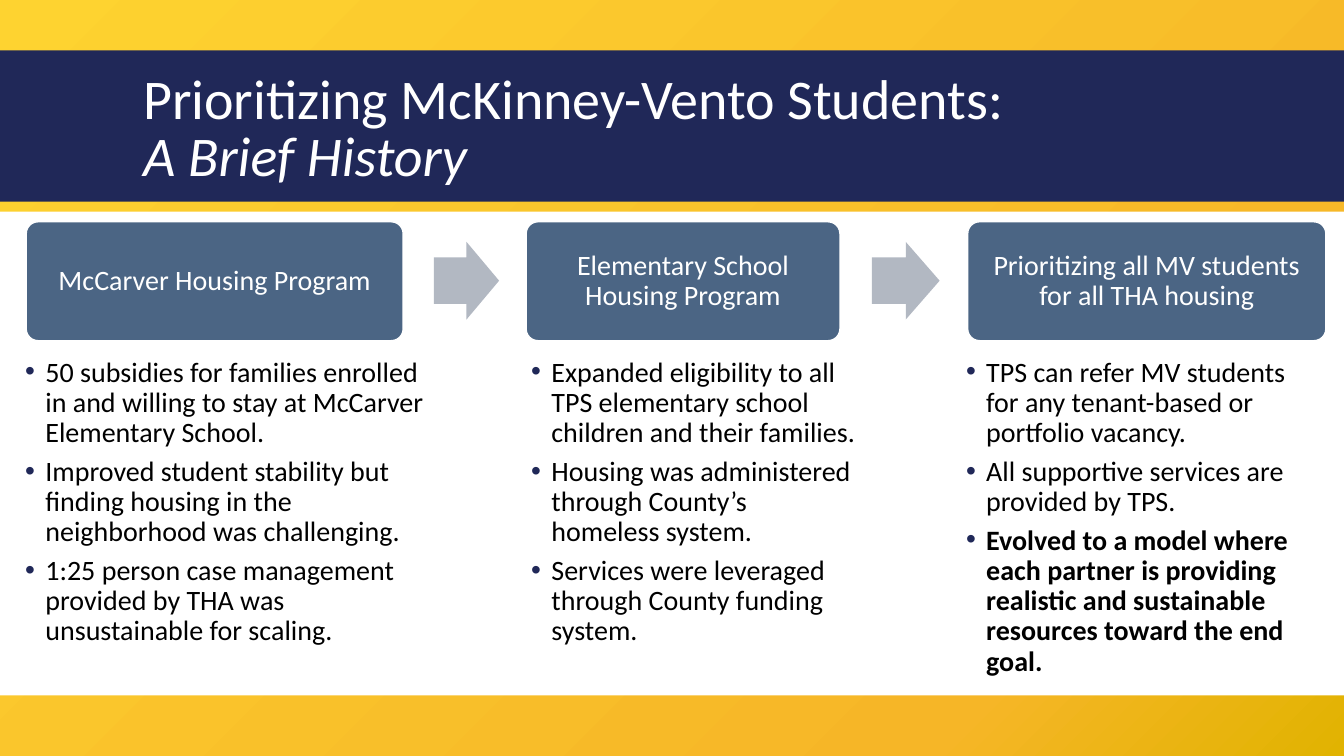
from dataclasses import dataclass
from itertools import pairwise

import lxml.etree
import pptx
import pptx.dml.color
import pptx.enum.shapes
import pptx.enum.text
import pptx.oxml.ns
import pptx.shapes.autoshape
import pptx.shapes.placeholder
import pptx.slide
import pptx.text.text
import pptx.util

SHAPE = pptx.enum.shapes.MSO_SHAPE
ALIGN = pptx.enum.text.PP_ALIGN
ANCHOR = pptx.enum.text.MSO_ANCHOR
FONT = "Calibri"
COLORS = {
    "navy": "202858", "white": "FFFFFF", "black": "000000",
    "card": "4B6584", "arrow": "B2B8C2",
    "gold_light": "FED330", "gold": "F6B627", "gold_dark": "E1B301",
}

# Grid: 100 columns by 75 rows
WIDTH, HEIGHT = pptx.util.Inches(13.33), pptx.util.Inches(7.5)
COLUMN, ROW = WIDTH / 100, HEIGHT / 75
CARD_TOP, CARD_ROWS = 22, 11.8
ARROW_TOP, ARROW_ROWS = 24, 7.7
LIST_TOP, LIST_ROWS = 35, 34


@dataclass(frozen=True)
class Area:
    left: float
    top: float
    columns: float
    rows: float

    def emu(self) -> tuple[int, int, int, int]:
        return (round(self.left * COLUMN), round(self.top * ROW),
                round(self.columns * COLUMN), round(self.rows * ROW))


@dataclass(frozen=True)
class Stage:
    heading: str
    card_left: float
    card_columns: float
    list_left: float
    list_columns: float
    placeholder: int
    points: tuple[str, ...]
    bold_last: bool = False


STAGES = (
    Stage("McCarver Housing Program", 1.95, 28.05, -0.75, 33.1, 1, (
        "50 subsidies for families enrolled in and willing to stay at McCarver Elementary School.",
        "Improved student stability but finding housing in the neighborhood was challenging.",
        "1:25 person case management provided by THA was unsustainable for scaling.")),
    Stage("Elementary School Housing Program", 39.15, 23.35, 36.9, 27.9, 2, (
        "Expanded eligibility to all TPS elementary school children and their families.",
        "Housing was administered through County’s homeless system.",
        "Services were leveraged through County funding system.")),
    Stage("Prioritizing all MV students for all THA housing", 72, 26.65, 69.25, 29.3, 3, (
        "TPS can refer MV students for any tenant-based or portfolio vacancy.",
        "All supportive services are provided by TPS.",
        "Evolved to a model where each partner is providing realistic and sustainable "
        "resources toward the end goal."), bold_last=True),
)


def rgb(name: str) -> pptx.dml.color.RGBColor:
    return pptx.dml.color.RGBColor.from_string(COLORS[name])


def add_child(parent: lxml.etree._Element, tag: str, **attributes: str) -> lxml.etree._Element:
    return lxml.etree.SubElement(parent, pptx.oxml.ns.qn(tag), attributes)


def add_text(paragraph: pptx.text.text._Paragraph, text: str, size: float, color: str,
             bold: bool = False, italic: bool = False) -> None:
    run = paragraph.add_run()
    run.text = text
    run.font.name, run.font.size = FONT, pptx.util.Pt(size)
    run.font.bold, run.font.italic = bold, italic
    run.font.color.rgb = rgb(color)


def add_block(slide: pptx.slide.Slide, kind: SHAPE, area: Area,
              color: str) -> pptx.shapes.autoshape.Shape:
    block = slide.shapes.add_shape(kind, *area.emu())
    block.shadow.inherit = False
    block.fill.solid()
    block.fill.fore_color.rgb = rgb(color)
    block.line.fill.background()
    return block


def place(holder: pptx.shapes.placeholder.SlidePlaceholder, area: Area,
          anchor: ANCHOR) -> pptx.text.text.TextFrame:
    holder.left, holder.top, holder.width, holder.height = area.emu()
    frame = holder.text_frame
    frame.word_wrap = True
    frame.auto_size = pptx.enum.text.MSO_AUTO_SIZE.NONE
    frame.vertical_anchor = anchor
    return frame


def paint_background(slide: pptx.slide.Slide) -> None:
    slide.background.fill.gradient()
    gradient = slide.element.find(".//" + pptx.oxml.ns.qn("a:gradFill"))
    gradient.clear()
    stops = add_child(gradient, "a:gsLst")
    for share, color in ((0, "gold_light"), (80, "gold"), (100, "gold_dark")):
        stop = add_child(stops, "a:gs", pos=str(share * 1000))
        add_child(stop, "a:srgbClr", val=COLORS[color])
    circle = add_child(gradient, "a:path", path="circle")
    add_child(circle, "a:fillToRect", r="100000", b="100000")


def add_bands(slide: pptx.slide.Slide) -> None:
    for area, color in ((Area(0, 5, 100, 15), "navy"), (Area(0, 21, 100, 48), "white")):
        band = add_block(slide, SHAPE.RECTANGLE, area, color).element
        band.getparent().insert(2, band)  # behind the placeholders


def write_title(slide: pptx.slide.Slide) -> None:
    frame = place(slide.shapes.title, Area(9.9, 6, 80.3, 14), ANCHOR.MIDDLE)
    paragraph = frame.paragraphs[0]
    paragraph.alignment, paragraph.line_spacing = ALIGN.LEFT, 0.85
    add_text(paragraph, "Prioritizing McKinney-Vento Students:", 40, "white")
    paragraph.add_line_break()
    add_text(paragraph, "A Brief History", 40, "white", italic=True)


def add_card(slide: pptx.slide.Slide, stage: Stage) -> None:
    area = Area(stage.card_left, CARD_TOP, stage.card_columns, CARD_ROWS)
    card = add_block(slide, SHAPE.ROUNDED_RECTANGLE, area, "card")
    card.adjustments[0] = 0.1
    card.line.color.rgb = rgb("white")
    card.line.width = pptx.util.Pt(1)
    frame = card.text_frame
    frame.word_wrap, frame.vertical_anchor = True, ANCHOR.MIDDLE
    inset = pptx.util.Inches(0.08)
    frame.margin_left = frame.margin_right = frame.margin_top = frame.margin_bottom = inset
    heading = frame.paragraphs[0]
    heading.alignment, heading.line_spacing = ALIGN.CENTER, 0.9
    add_text(heading, stage.heading, 20, "white")


def add_arrow(slide: pptx.slide.Slide, before: Stage, after: Stage) -> None:
    start = before.card_left + before.card_columns
    gap = after.card_left - start
    area = Area(start + 0.25 * gap, ARROW_TOP, 0.53 * gap, ARROW_ROWS)
    arrow = add_block(slide, SHAPE.RIGHT_ARROW, area, "arrow")
    arrow.adjustments[0], arrow.adjustments[1] = 0.6, 0.5


def write_points(slide: pptx.slide.Slide, stage: Stage) -> None:
    area = Area(stage.list_left, LIST_TOP, stage.list_columns, LIST_ROWS)
    frame = place(slide.placeholders[stage.placeholder], area, ANCHOR.TOP)
    for number, point in enumerate(stage.points):
        paragraph = frame.add_paragraph() if number else frame.paragraphs[0]
        paragraph.level, paragraph.alignment = 1, ALIGN.LEFT
        paragraph.line_spacing = 0.9
        paragraph.space_before = pptx.util.Pt(2 if number else 0)
        paragraph.space_after = pptx.util.Pt(4)
        properties = paragraph._p.get_or_add_pPr()
        properties.set("marL", str(pptx.util.Inches(0.45)))
        properties.set("indent", str(pptx.util.Inches(-0.2)))
        add_child(add_child(properties, "a:buClr"), "a:srgbClr", val=COLORS["navy"])
        add_child(properties, "a:buFont", typeface="Arial")
        add_child(properties, "a:buChar", char="•")
        is_last = number == len(stage.points) - 1
        add_text(paragraph, point, 20, "black", bold=stage.bold_last and is_last)


def main() -> None:
    deck = pptx.Presentation()
    deck.slide_width, deck.slide_height = WIDTH, HEIGHT
    slide = deck.slides.add_slide(deck.slide_layouts.get_by_name("Comparison"))

    # Backdrop and title
    paint_background(slide)
    add_bands(slide)
    write_title(slide)

    # Three stages, joined by arrows
    for stage in STAGES:
        add_card(slide, stage)
        write_points(slide, stage)
    for before, after in pairwise(STAGES):
        add_arrow(slide, before, after)

    # The layout's fourth list is not needed
    spare = slide.placeholders[4].element
    spare.getparent().remove(spare)
    deck.save("out.pptx")


if __name__ == "__main__":
    main()
